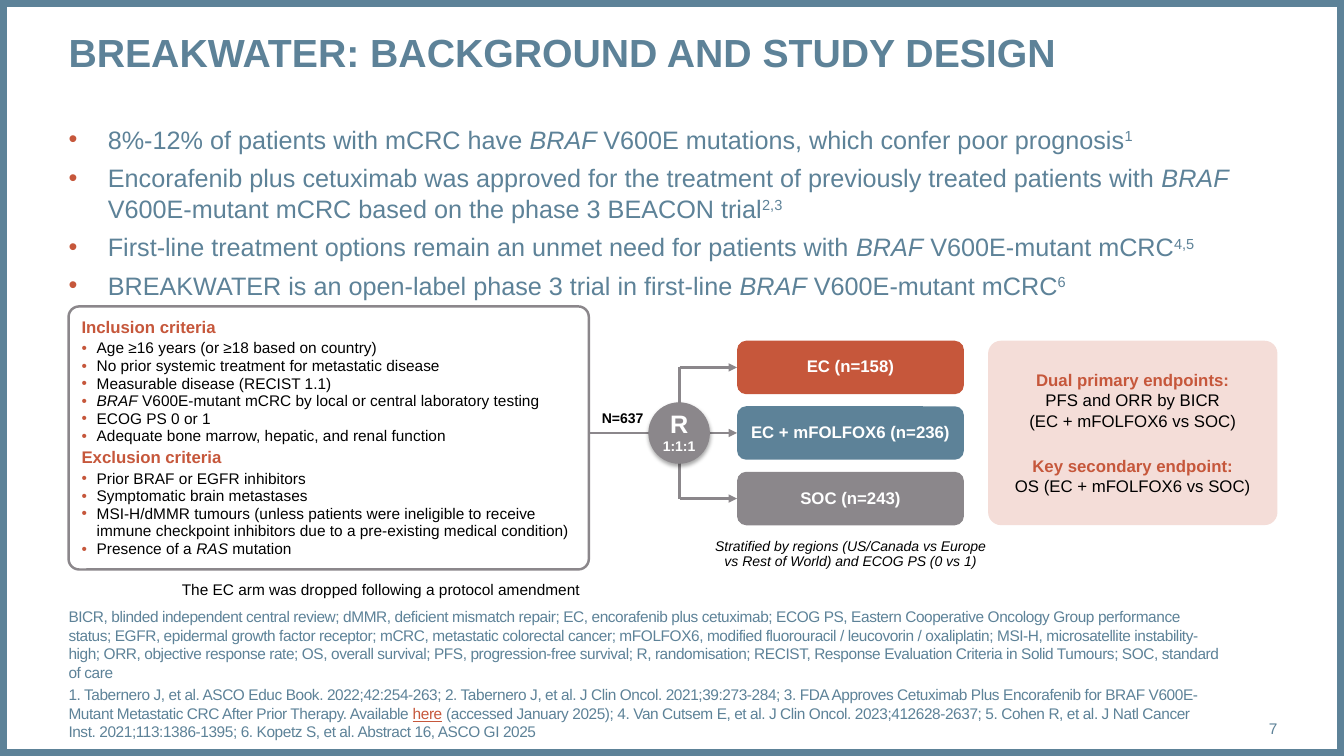
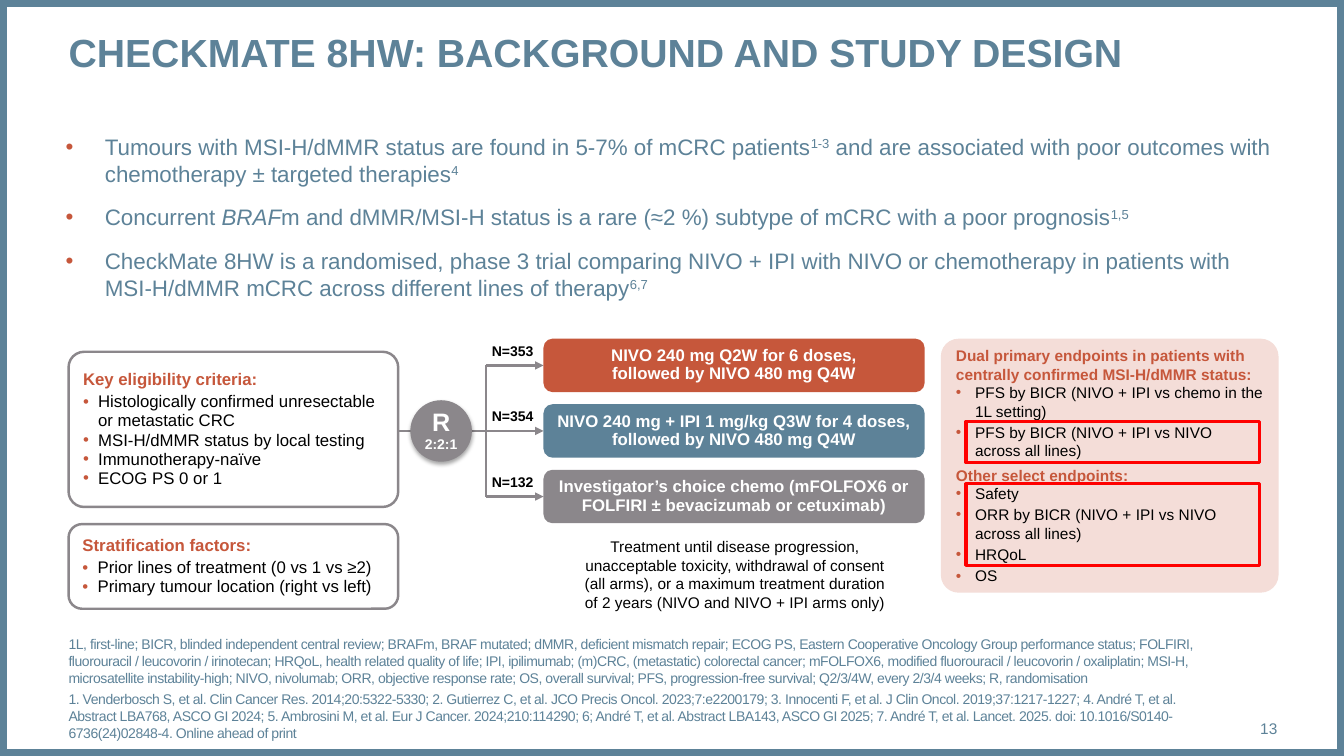
from copy import deepcopy

from lxml.etree import SubElement
from pptx import Presentation
from pptx.dml.color import RGBColor
from pptx.enum.shapes import MSO_CONNECTOR, MSO_SHAPE
from pptx.enum.text import MSO_ANCHOR, MSO_AUTO_SIZE, PP_ALIGN
from pptx.oxml.ns import qn
from pptx.util import Inches, Pt

BLUE, RED, GREY, PINK = "5D8298", "C6573B", "8B878B", "F4DDD8"
BLACK, WHITE, MARKER = "000000", "FFFFFF", "FF0000"
FONT = "Arial"
color_of = RGBColor.from_string

deck = Presentation()
deck.slide_width, deck.slide_height = Inches(13.33), Inches(7.5)
COLUMN, ROW = deck.slide_width / 100, deck.slide_height / 100
MARGIN, CONTENT = 5.1, 90
ARM_HEIGHT, ARM_PITCH = 7.07, 8.67
CIRCLE_WIDTH, CIRCLE_HEIGHT = 4.58, 8.13


def add_box(page, place, kind=None, fill=None, line=None, weight=1.75, radius=None):
    left, top, width, height = place
    frame = [round(left * COLUMN), round(top * ROW), round(width * COLUMN), round(height * ROW)]
    if kind is None:
        return page.shapes.add_textbox(*frame)
    box = page.shapes.add_shape(kind, *frame)
    box.shadow.inherit = False
    if radius:
        box.adjustments[0] = radius
    if fill:
        box.fill.solid()
        box.fill.fore_color.rgb = color_of(fill)
    else:
        box.fill.background()
    if line:
        box.line.color.rgb = color_of(line)
        box.line.width = Pt(weight)
    else:
        box.line.fill.background()
    return box


def write(box, lines, size, color=BLACK, bold=False, align=PP_ALIGN.LEFT,
          anchor=MSO_ANCHOR.TOP, inset=(0, 0), spacing=None, before=0, after=0,
          indent=0.39, heading=(12, 2, 2), tracking=0):
    frame = box.text_frame
    frame.word_wrap = True
    frame.auto_size = MSO_AUTO_SIZE.NONE
    frame.vertical_anchor = anchor
    frame.margin_left = frame.margin_right = Inches(inset[0])
    frame.margin_top = frame.margin_bottom = Inches(inset[1])
    for number, text in enumerate(lines):
        para = frame.add_paragraph() if number else frame.paragraphs[0]
        is_heading, is_bullet = text.startswith("# "), text.startswith("- ")
        heading_size, heading_before, heading_after = heading
        para.alignment = align
        para.line_spacing = spacing
        para.space_before = Pt((heading_before if is_heading else before) if number else 0)
        para.space_after = Pt(heading_after if is_heading else after)
        if is_bullet:
            properties = para._p.get_or_add_pPr()
            properties.set("marL", str(Inches(indent)))
            properties.set("indent", str(-Inches(indent)))
            SubElement(SubElement(properties, qn("a:buClr")), qn("a:srgbClr")).set("val", RED)
            SubElement(properties, qn("a:buFont")).set("typeface", FONT)
            SubElement(properties, qn("a:buChar")).set("char", "•")
        if is_heading or is_bullet:
            text = text[2:]
        for part in text.split("|"):
            style = part[0] if part[0] in "/^_" else ""
            for position, piece in enumerate(part[len(style):].split("\n")):
                if position:
                    para.add_line_break()
                span = para.add_run()
                span.text = piece
                font = span.font
                font.name = FONT
                font.size = Pt(heading_size if is_heading else size)
                font.bold = bold or is_heading
                font.italic = style == "/"
                font.underline = style == "_"
                font.color.rgb = color_of(RED if is_heading or style == "_" else color)
                if style == "^":
                    span._r.get_or_add_rPr().set("baseline", "30000")
                if tracking:
                    span._r.get_or_add_rPr().set("spc", str(tracking))
        for line_break in para._p.findall(qn("a:br")):
            line_break.append(deepcopy(line_break.getprevious().find(qn("a:rPr"))))


studies = [
    {
        "title": "BREAKWATER: BACKGROUND AND STUDY DESIGN",
        "number": "7",
        "background": (MARGIN, 16.4, CONTENT, 24),
        "background_size": 18,
        "background_gap": 6,
        "points": [
            "- 8%-12% of patients with mCRC have |/BRAF |V600E mutations, which confer poor prognosis|^1",
            "- Encorafenib plus cetuximab was approved for the treatment of previously treated patients with |/BRAF| V600E-mutant mCRC based on the phase 3 BEACON trial|^2,3",
            "- First-line treatment options remain an unmet need for patients with |/BRAF| V600E-mutant mCRC|^4,5",
            "- BREAKWATER is an open-label phase 3 trial in first-line |/BRAF| V600E-mutant mCRC|^6",
        ],
        "criteria_width": 38.71,
        "criteria_size": 11,
        "criteria": [(40.53, 34.8, 0.04, [
            "# Inclusion criteria",
            "- Age ≥16 years (or ≥18 based on country)",
            "- No prior systemic treatment for metastatic disease",
            "- Measurable disease (RECIST 1.1)",
            "- |/BRAF| V600E-mutant mCRC by local or central laboratory testing".replace("- |", "- "),
            "- ECOG PS 0 or 1",
            "- Adequate bone marrow, hepatic, and renal function",
            "# Exclusion criteria",
            "- Prior BRAF or EGFR inhibitors",
            "- Symptomatic brain metastases",
            "- MSI-H/dMMR tumours (unless patients were ineligible to receive immune checkpoint inhibitors due to a pre-existing medical condition)",
            "- Presence of a |/RAS| mutation",
        ])],
        "circle_left": 48.24,
        "ratio": "1:1:1",
        "trunk": 50.56,
        "arms_left": 54.84,
        "arms_top": 45.07,
        "arms_width": 16.88,
        "arms": ["EC (n=158)", "EC + mFOLFOX6 (n=236)", "SOC (n=243)"],
        "counts_left": 43.81,
        "counts": [(1, "N=637")],
        "endpoints": (73.52, 45.07, 21.53, 24.4),
        "endpoints_style": {"size": 12, "align": PP_ALIGN.CENTER, "heading": (12, 16, 0)},
        "endpoint_lines": [
            "# Dual primary endpoints:",
            "PFS and ORR by BICR\n(EC + mFOLFOX6 vs SOC)",
            "# Key secondary endpoint:",
            "OS (EC + mFOLFOX6 vs SOC)",
        ],
        "markers": [],
        "notes": [
            ((52.21, 71.33, 22.13, 4), 10, 0.9, "/Stratified by regions (US/Canada vs Europe\nvs Rest of World) and ECOG PS (0 vs 1)"),
            ((12.08, 76.67, 32.56, 2.6), 11, 1.0, "The EC arm was dropped following a protocol amendment"),
        ],
        "sources_width": 85.67,
        "sources_size": 11,
        "sources": [
            "BICR, blinded independent central review; dMMR, deficient mismatch repair; EC, encorafenib plus cetuximab; ECOG PS, Eastern Cooperative Oncology Group performance status; EGFR, epidermal growth factor receptor; mCRC, metastatic colorectal cancer; mFOLFOX6, modified fluorouracil / leucovorin / oxaliplatin; MSI-H, microsatellite instability-high; ORR, objective response rate; OS, overall survival; PFS, progression-free survival; R, randomisation; RECIST, Response Evaluation Criteria in Solid Tumours; SOC, standard of care",
            "1. Tabernero J, et al. ASCO Educ Book. 2022;42:254-263; 2. Tabernero J, et al. J Clin Oncol. 2021;39:273-284; 3. FDA Approves Cetuximab Plus Encorafenib for BRAF V600E-Mutant Metastatic CRC After Prior Therapy. Available |_here| (accessed January 2025); 4. Van Cutsem E, et al. J Clin Oncol. 2023;412628-2637; 5. Cohen R, et al. J Natl Cancer Inst. 2021;113:1386-1395; 6. Kopetz S, et al. Abstract 16, ASCO GI 2025",
        ],
    },
    {
        "title": "CHECKMATE 8HW: BACKGROUND AND STUDY DESIGN",
        "number": "13",
        "background": (4.88, 17.6, CONTENT, 28),
        "background_size": 16,
        "background_gap": 12,
        "points": [
            "- Tumours with MSI-H/dMMR status are found in 5-7% of mCRC patients|^1-3| and are associated with poor outcomes with chemotherapy ± targeted therapies|^4",
            "- Concurrent|/ BRAF|m and dMMR/MSI-H status is a rare (≈2 %) subtype of mCRC with a poor prognosis|^1,5",
            "- CheckMate 8HW is a randomised, phase 3 trial comparing NIVO + IPI with NIVO or chemotherapy in patients with MSI-H/dMMR mCRC across different lines of therapy|^6,7",
        ],
        "criteria_width": 24.53,
        "criteria_size": 12,
        "criteria": [
            (46.53, 20.53, 0.1, [
                "# Key eligibility criteria:",
                "- Histologically confirmed unresectable or metastatic CRC",
                "- MSI-H/dMMR status by local testing",
                "- Immunotherapy-naïve",
                "- ECOG PS 0 or 1",
            ]),
            (69.33, 11.2, 0.16, [
                "# Stratification factors:",
                "- Prior lines of treatment (0 vs 1 vs ≥2)",
                "- Primary tumour location (right vs left)",
            ]),
        ],
        "circle_left": 30.53,
        "ratio": "2:2:1",
        "trunk": 36.16,
        "arms_left": 40.44,
        "arms_top": 44.8,
        "arms_width": 28.36,
        "arms": [
            "NIVO 240 mg Q2W for 6 doses,\nfollowed by NIVO 480 mg Q4W",
            "NIVO 240 mg + IPI 1 mg/kg Q3W for 4 doses,\nfollowed by NIVO 480 mg Q4W",
            "Investigator’s choice chemo (mFOLFOX6 or FOLFIRI ± bevacizumab or cetuximab)",
        ],
        "counts_left": 35.63,
        "counts": [(0, "N=353"), (1, "N=354"), (2, "N=132")],
        "endpoints": (70, 44.8, 25.13, 33.6),
        "endpoints_style": {"size": 11, "indent": 0.19, "heading": (11, 2, 0)},
        "endpoint_lines": [
            "# Dual primary endpoints in patients with centrally confirmed MSI-H/dMMR status:",
            "- PFS by BICR (NIVO + IPI vs chemo in the 1L setting)",
            "- PFS by BICR (NIVO + IPI vs NIVO\nacross all lines)",
            "# Other select endpoints:",
            "- Safety",
            "- ORR by BICR (NIVO + IPI vs NIVO across all lines)",
            "- HRQoL",
            "- OS",
        ],
        "markers": [(71.87, 55.73, 21.83, 5.47), (71.87, 64, 21.83, 10.8)],
        "notes": [
            ((40.66, 71.07, 28.06, 9.87), 11, 1.0, "Treatment until disease progression,\nunacceptable toxicity, withdrawal of consent\n(all arms), or a maximum treatment duration\nof 2 years (NIVO and NIVO + IPI arms only)"),
        ],
        "sources_width": 85.07,
        "sources_size": 10,
        "sources": [
            "1L, first-line; BICR, blinded independent central review; BRAFm, BRAF mutated; dMMR, deficient mismatch repair; ECOG PS, Eastern Cooperative Oncology Group performance status; FOLFIRI, fluorouracil / leucovorin / irinotecan; HRQoL, health related quality of life; IPI, ipilimumab; (m)CRC, (metastatic) colorectal cancer; mFOLFOX6, modified fluorouracil / leucovorin / oxaliplatin; MSI‑H, microsatellite instability-high; NIVO, nivolumab; ORR, objective response rate; OS, overall survival; PFS, progression-free survival; Q2/3/4W, every 2/3/4 weeks; R, randomisation",
            "1. Venderbosch S, et al. Clin Cancer Res. 2014;20:5322-5330; 2. Gutierrez C, et al. JCO Precis Oncol. 2023;7:e2200179; 3. Innocenti F, et al. J Clin Oncol. 2019;37:1217-1227; 4. André T, et al. Abstract LBA768, ASCO GI 2024; 5. Ambrosini M, et al. Eur J Cancer. 2024;210:114290; 6; André T, et al. Abstract LBA143, ASCO GI 2025; 7. André T, et al. Lancet. 2025. doi: 10.1016/S0140-6736(24)02848-4. Online ahead of print",
        ],
    },
]

for study in studies:
    page = deck.slides.add_slide(deck.slide_layouts[5])
    add_box(page, (0, 0, 100, 100), MSO_SHAPE.RECTANGLE, line=BLUE, weight=10)
    title = page.shapes.title
    title.left, title.top = round(MARGIN * COLUMN), round(3.73 * ROW)
    title.width, title.height = round(CONTENT * COLUMN), round(7.33 * ROW)
    write(title, [study["title"]], 28, BLUE, bold=True)
    write(add_box(page, study["background"]), study["points"], study["background_size"], BLUE,
          before=study["background_gap"])
    write(add_box(page, (88.6, 93.73, 6.45, 5.33)), [study["number"]], 11, BLUE,
          align=PP_ALIGN.RIGHT, anchor=MSO_ANCHOR.MIDDLE)
    write(add_box(page, (MARGIN, 80, study["sources_width"], 18)), study["sources"],
          study["sources_size"], BLUE, anchor=MSO_ANCHOR.BOTTOM, before=3, tracking=-30)

    arms_left, arms_top, trunk = study["arms_left"], study["arms_top"], study["trunk"]
    upper, middle, lower = [arms_top + ARM_HEIGHT / 2 + row * ARM_PITCH for row in range(3)]
    criteria_right = MARGIN + study["criteria_width"]
    for start_x, start_y, end_x, end_y in [
        (trunk, upper, trunk, lower),
        (trunk, upper, arms_left, upper),
        (criteria_right, middle, arms_left, middle),
        (trunk, lower, arms_left, lower),
    ]:
        line = page.shapes.add_connector(
            MSO_CONNECTOR.STRAIGHT, round(start_x * COLUMN), round(start_y * ROW),
            round(end_x * COLUMN), round(end_y * ROW))
        line.line.color.rgb = color_of(GREY)
        line.line.width = Pt(2)
        if end_x == arms_left:
            SubElement(line.line._get_or_add_ln(), qn("a:tailEnd")).set("type", "triangle")
        SubElement(line._element.spPr, qn("a:effectLst"))

    for row, (arm, fill) in enumerate(zip(study["arms"], [RED, BLUE, GREY])):
        place = (arms_left, arms_top + row * ARM_PITCH, study["arms_width"], ARM_HEIGHT)
        box = add_box(page, place, MSO_SHAPE.ROUNDED_RECTANGLE, fill, radius=0.17)
        write(box, [arm], 12, WHITE, bold=True, align=PP_ALIGN.CENTER,
              anchor=MSO_ANCHOR.MIDDLE, inset=(0.1, 0.05), spacing=0.9)

    for top, height, radius, lines in study["criteria"]:
        box = add_box(page, (MARGIN, top, study["criteria_width"], height),
                      MSO_SHAPE.ROUNDED_RECTANGLE, WHITE, GREY, radius=radius)
        write(box, lines, study["criteria_size"], anchor=MSO_ANCHOR.MIDDLE,
              inset=(0.1, 0.05), spacing=0.95, indent=0.15)

    circle = add_box(page, (study["circle_left"], middle - CIRCLE_HEIGHT / 2, CIRCLE_WIDTH, CIRCLE_HEIGHT),
                     MSO_SHAPE.OVAL, GREY)
    write(circle, ["R", study["ratio"]], 10, WHITE, bold=True, align=PP_ALIGN.CENTER,
          anchor=MSO_ANCHOR.MIDDLE, inset=(0, 0.05), spacing=0.9)
    circle.text_frame.paragraphs[0].runs[0].font.size = Pt(18)
    shadow = SubElement(circle._element.spPr.find(qn("a:effectLst")), qn("a:outerShdw"),
                        blurRad=str(Pt(3.1)), dist=str(Pt(1.8)), dir="5400000")
    shade = SubElement(shadow, qn("a:srgbClr"), val=BLACK)
    SubElement(shade, qn("a:alpha"), val="35000")

    for row, count in study["counts"]:
        box = add_box(page, (study["counts_left"], arms_top + row * ARM_PITCH + 0.7, 5.03, 2))
        write(box, [count], 10, bold=True, align=PP_ALIGN.CENTER, spacing=0.9)

    box = add_box(page, study["endpoints"], MSO_SHAPE.ROUNDED_RECTANGLE, PINK, radius=0.07)
    write(box, study["endpoint_lines"], anchor=MSO_ANCHOR.MIDDLE, inset=(0.1, 0.05), after=2,
          **study["endpoints_style"])
    for place in study["markers"]:
        add_box(page, place, MSO_SHAPE.RECTANGLE, line=MARKER, weight=2.25)
    for place, size, spacing, note in study["notes"]:
        write(add_box(page, place), [note], size, align=PP_ALIGN.CENTER, spacing=spacing)

deck.save("out.pptx")
